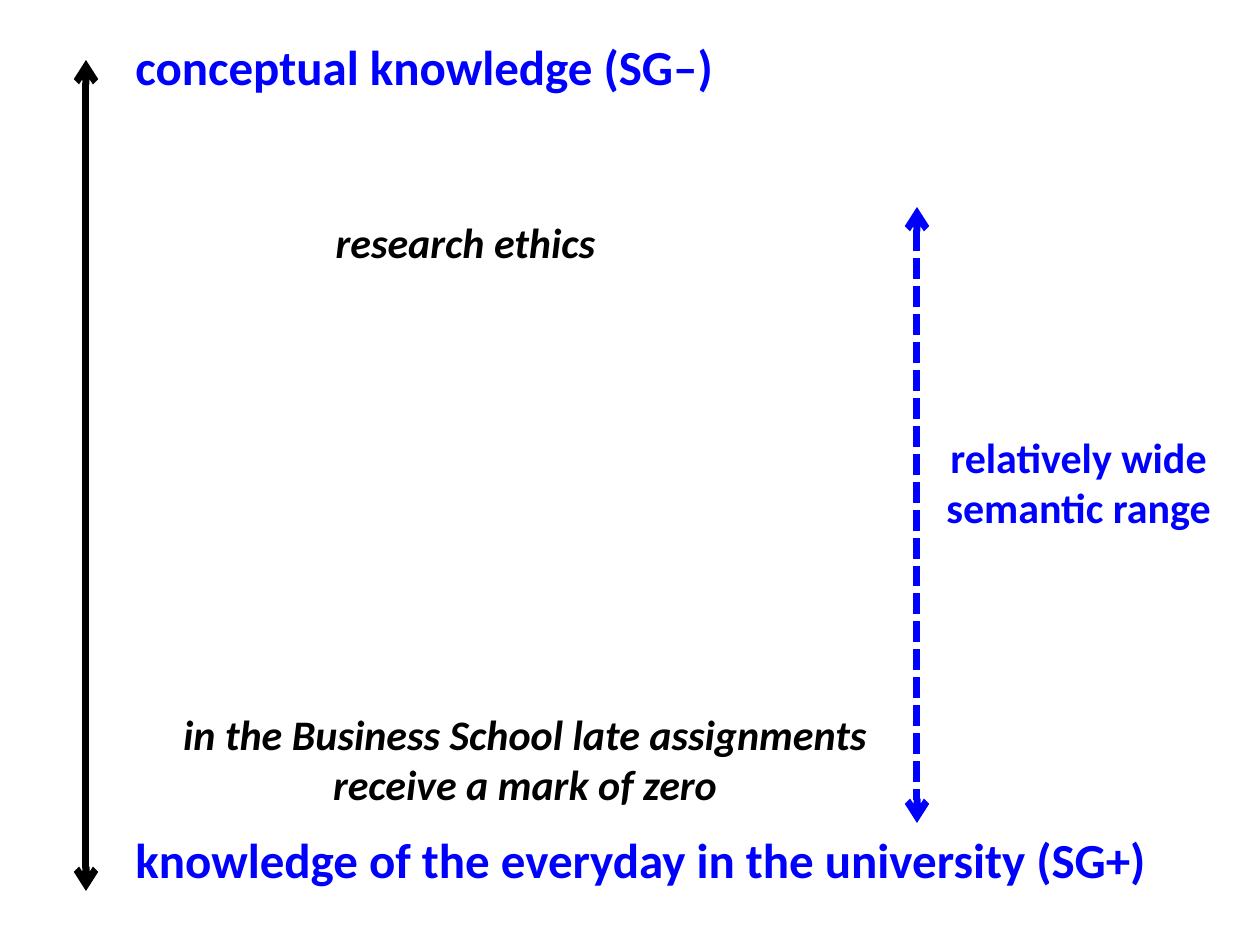
from dataclasses import dataclass
from typing import Optional

from lxml.etree import SubElement
from pptx import Presentation
from pptx.dml.color import RGBColor
from pptx.enum.dml import MSO_LINE_DASH_STYLE as DashStyle
from pptx.enum.shapes import MSO_CONNECTOR as ConnectorType
from pptx.enum.text import PP_PARAGRAPH_ALIGNMENT as Align
from pptx.oxml.ns import qn
from pptx.slide import Slide
from pptx.util import Emu, Pt

PIXELS_PER_INCH = 126
SLIDE_WIDTH, SLIDE_HEIGHT = 1260, 945


@dataclass(frozen=True)
class Theme:
    font: str = "Calibri"
    ink: RGBColor = RGBColor(0, 0, 0)
    accent: RGBColor = RGBColor(0, 0, 255)
    heading: Pt = Pt(28)
    body: Pt = Pt(24)
    line: Pt = Pt(4)


THEME = Theme()


@dataclass(frozen=True)
class Label:
    text: str
    left: int
    top: int
    width: int
    height: int
    color: RGBColor = THEME.accent
    size: Pt = THEME.body
    italic: bool = False
    align: Align = Align.CENTER


@dataclass(frozen=True)
class RangeArrow:
    x: int
    top: int
    bottom: int
    color: RGBColor
    dash: Optional[DashStyle] = None


ARROWS = [
    RangeArrow(86, 60, 891, THEME.ink),
    RangeArrow(917, 207, 823, THEME.accent, DashStyle.SQUARE_DOT),
]

LABELS = [
    Label("knowledge of the everyday in the university (SG+)",
          123, 823, 1106, 97, size=THEME.heading, align=Align.LEFT),
    Label("conceptual knowledge (SG–)",
          123, 30, 917, 97, size=THEME.heading, align=Align.LEFT),
    Label("in the Business School late assignments receive a mark of zero",
          155, 702, 740, 123, color=THEME.ink, italic=True),
    Label("research ethics", 241, 210, 449, 88, color=THEME.ink, italic=True),
    Label("relatively wide semantic range", 917, 425, 323, 97),
]


def px(length: int) -> Emu:
    return Emu(round(length * 914400 / PIXELS_PER_INCH))


def apply_format(target: object, values: dict) -> None:
    for name, value in values.items():
        setattr(target, name, value)


def draw_arrow(slide: Slide, arrow: RangeArrow) -> None:
    connector = slide.shapes.add_connector(
        ConnectorType.STRAIGHT,
        px(arrow.x), px(arrow.top), px(arrow.x), px(arrow.bottom))
    connector.line.color.rgb = arrow.color
    apply_format(connector.line, {"width": THEME.line, "dash_style": arrow.dash})
    outline = connector.line._get_or_add_ln()
    for end in ("a:headEnd", "a:tailEnd"):
        SubElement(outline, qn(end), type="arrow")
    SubElement(connector._element.spPr, qn("a:effectLst"))


def draw_label(slide: Slide, label: Label) -> None:
    shape = slide.shapes.add_textbox(
        px(label.left), px(label.top), px(label.width), px(label.height))
    shape.text_frame.word_wrap = True
    paragraph = shape.text_frame.paragraphs[0]
    paragraph.alignment = label.align
    run = paragraph.add_run()
    run.text = label.text
    apply_format(run.font, {
        "name": THEME.font,
        "size": label.size,
        "bold": True,
        "italic": label.italic,
    })
    run.font.color.rgb = label.color


def main() -> None:
    presentation = Presentation()
    apply_format(presentation, {
        "slide_width": px(SLIDE_WIDTH),
        "slide_height": px(SLIDE_HEIGHT),
    })
    slide = presentation.slides.add_slide(presentation.slide_layouts[6])
    for arrow in ARROWS:
        draw_arrow(slide, arrow)
    for label in LABELS:
        draw_label(slide, label)
    presentation.save("out.pptx")


if __name__ == "__main__":
    main()
